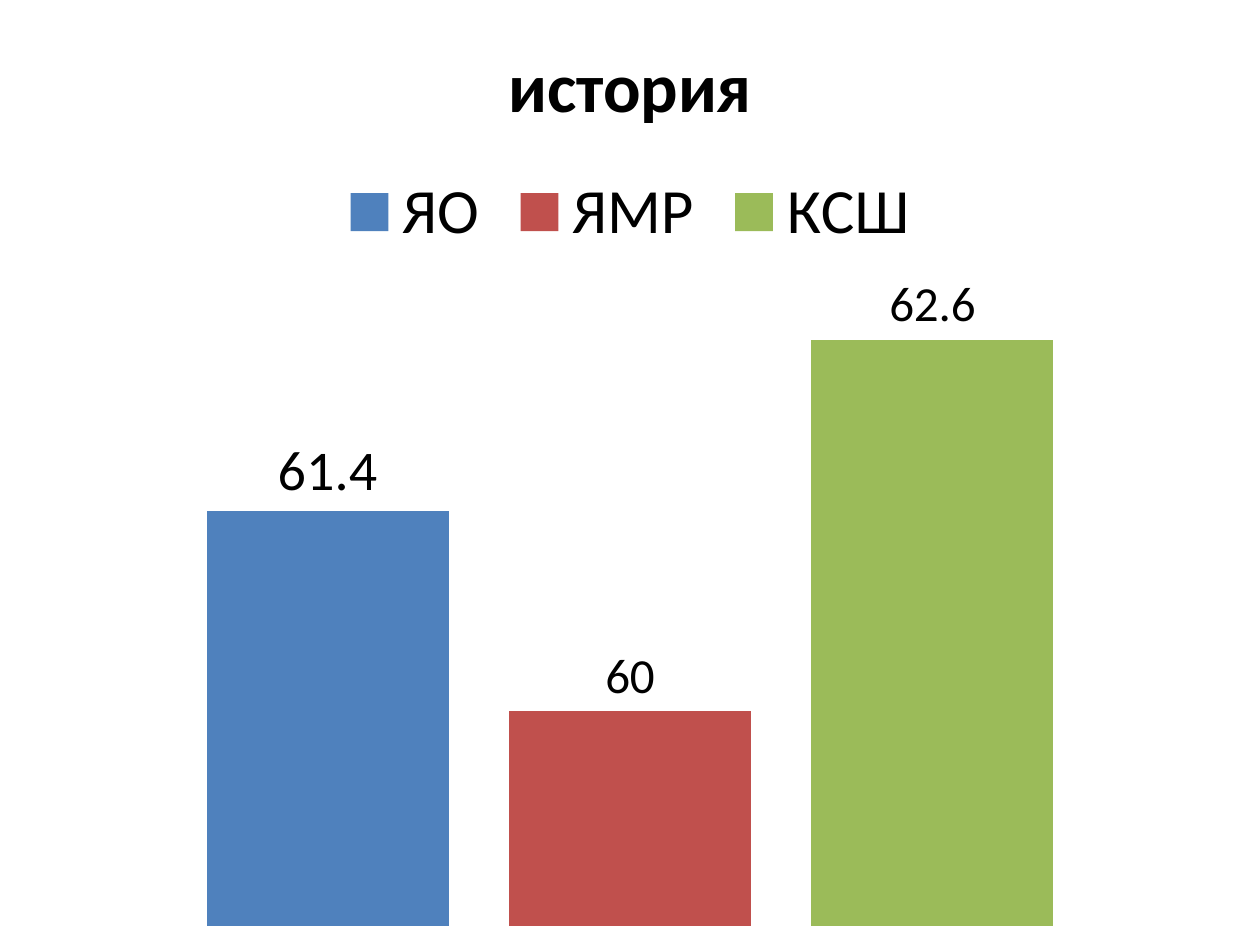
import pptx
import pptx.chart.data
import pptx.dml.color
import pptx.enum.chart
import pptx.util

PX = 914400 // 126
SLIDE_WIDTH, SLIDE_HEIGHT = 1260, 945
FONT = "Calibri"
BLACK = "000000"

TITLE = "история"
CATEGORY = "1"
# name, score, fill, label size in points
GROUPS = [
    ("ЯО", 61.4, "4F81BD", 32),
    ("ЯМР", 60, "C0504D", 28),
    ("КСШ", 62.6, "9BBB59", 28),
]
SCORE_RANGE = (58.5, 63)


def rgb(color):
    return pptx.dml.color.RGBColor.from_string(color)


def style_font(font, size, bold=False):
    font.name = FONT
    font.size = pptx.util.Pt(size)
    font.bold = bold
    font.color.rgb = rgb(BLACK)


def add_score_chart(slide):
    scores = pptx.chart.data.CategoryChartData(number_format="General")
    scores.categories = [CATEGORY]
    for name, score, _, _ in GROUPS:
        scores.add_series(name, [score])
    return slide.shapes.add_chart(
        pptx.enum.chart.XL_CHART_TYPE.COLUMN_CLUSTERED,
        0, 0, SLIDE_WIDTH * PX, SLIDE_HEIGHT * PX, scores,
    ).chart


def style_frame(chart):
    """Format the title, the legend and the hidden axes."""
    style_font(chart.font, 10)
    chart.has_title = True
    title = chart.chart_title.text_frame
    title.text = TITLE
    style_font(title.paragraphs[0].runs[0].font, 40, bold=True)
    chart.chart_title.include_in_layout = False

    chart.has_legend = True
    chart.legend.position = pptx.enum.chart.XL_LEGEND_POSITION.TOP
    chart.legend.include_in_layout = False
    style_font(chart.legend.font, 36)

    chart.value_axis.minimum_scale, chart.value_axis.maximum_scale = SCORE_RANGE
    for axis in (chart.category_axis, chart.value_axis):
        axis.has_major_gridlines = False
        axis.visible = False


def style_columns(chart):
    plot = chart.plots[0]
    plot.gap_width = 150
    plot.overlap = -25
    plot.vary_by_categories = False
    for column, (_, _, color, label_size) in zip(plot.series, GROUPS):
        column.invert_if_negative = False
        column.format.fill.solid()
        column.format.fill.fore_color.rgb = rgb(color)
        labels = column.data_labels
        labels.show_value = True
        labels.position = pptx.enum.chart.XL_LABEL_POSITION.OUTSIDE_END
        style_font(labels.font, label_size)


def main():
    deck = pptx.Presentation()
    deck.slide_width = SLIDE_WIDTH * PX
    deck.slide_height = SLIDE_HEIGHT * PX
    slide = deck.slides.add_slide(deck.slide_layouts[6])
    chart = add_score_chart(slide)
    style_frame(chart)
    style_columns(chart)
    deck.save("out.pptx")


if __name__ == "__main__":
    main()
